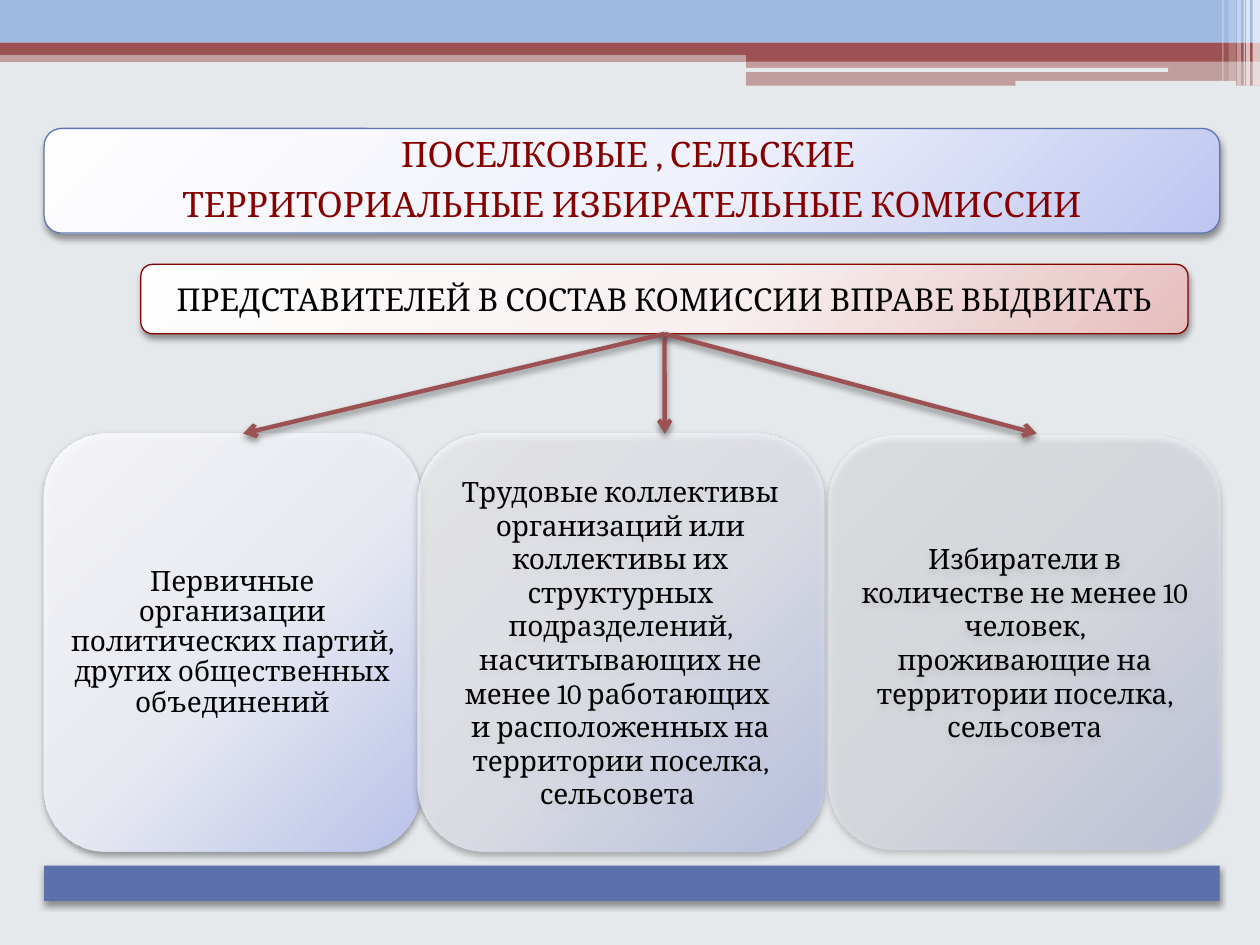
from lxml.etree import SubElement
from pptx import Presentation
from pptx.dml.color import RGBColor
from pptx.enum.shapes import MSO_CONNECTOR, MSO_SHAPE
from pptx.enum.text import MSO_ANCHOR, PP_ALIGN
from pptx.oxml.ns import qn
from pptx.util import Cm, Pt

FONT = "Cambria"
BACKGROUND = RGBColor(0xE5, 0xE9, 0xEB)
SKY = RGBColor(0x9F, 0xB9, 0xE1)
BRICK = RGBColor(0x9C, 0x52, 0x52)
MAROON = RGBColor(0x86, 0x00, 0x00)
BLUE = RGBColor(0x60, 0x76, 0xB4)
BAR_BLUE = RGBColor(0x5C, 0x71, 0xAC)
WHITE = RGBColor(0xFF, 0xFF, 0xFF)
BLACK = RGBColor(0x00, 0x00, 0x00)
BLUE_FADE = [RGBColor(0xFE, 0xFE, 0xFF), RGBColor(0xEF, 0xF1, 0xFB), RGBColor(0xBC, 0xC6, 0xF1)]
RED_FADE = [RGBColor(0xFE, 0xFE, 0xFE), RGBColor(0xF8, 0xF0, 0xF0), RGBColor(0xE6, 0xBE, 0xBE)]

HEADING = ["ПОСЕЛКОВЫЕ , СЕЛЬСКИЕ ", "ТЕРРИТОРИАЛЬНЫЕ ИЗБИРАТЕЛЬНЫЕ КОМИССИИ"]
QUESTION = "ПРЕДСТАВИТЕЛЕЙ В СОСТАВ КОМИССИИ ВПРАВЕ ВЫДВИГАТЬ"
PARTIES = "Первичные организации политических партий, других общественных объединений"
WORKERS = ("Трудовые коллективы организаций или коллективы их структурных подразделений, "
           "насчитывающих не менее 10 работающих \v"
           "и расположенных на территории поселка, сельсовета ")
VOTERS = ("Избиратели в количестве не менее 10 человек, проживающие на территории "
          "поселка, сельсовета")
# text, box in cm, opacity of the fill, line spacing
CARDS = [
    (PARTIES, (0.89, 8.74, 7.59, 8.43), 90, 0.9),
    (WORKERS, (8.41, 8.74, 8.2, 8.43), 70, 1.0),
    (VOTERS, (16.71, 8.79, 7.9, 8.33), 50, 1.0),
]


def add_color(parent, color, opacity):
    clr = SubElement(parent, qn("a:srgbClr"), val=str(color))
    if opacity < 100:
        SubElement(clr, qn("a:alpha"), val=str(opacity * 1000))


def add_block(s, kind, box, color=None, opacity=100):
    """Add a borderless shape; box is left, top, width, height in cm."""
    sp = s.shapes.add_shape(kind, *map(Cm, box))
    sp.shadow.inherit = False
    sp.line.fill.background()
    if color is not None:
        sp.fill.solid()
        sp.fill.fore_color.rgb = color
        if opacity < 100:
            solid = sp._element.spPr.find(qn("a:solidFill"))
            solid.remove(solid[0])
            add_color(solid, color, opacity)
    return sp


def fade(sp, colors, opacity=100):
    """Fill with a wide radial gradient that reads as a diagonal sheen."""
    sp.fill.gradient()
    grad = sp._element.spPr.find(qn("a:gradFill"))
    for child in list(grad):
        grad.remove(child)
    stops = SubElement(grad, qn("a:gsLst"))
    for pos, color in zip((0, 55, 100), colors):
        add_color(SubElement(stops, qn("a:gs"), pos=str(pos * 1000)), color, opacity)
    radial = SubElement(grad, qn("a:path"), path="circle")
    SubElement(radial, qn("a:fillToRect"), l="-40000", t="-90000", r="140000", b="190000")


def drop_shadow(sp, opacity=40):
    spPr = sp._element.spPr
    effects = spPr.find(qn("a:effectLst"))
    if effects is None:
        effects = SubElement(spPr, qn("a:effectLst"))
    shadow = SubElement(effects, qn("a:outerShdw"), blurRad=str(Pt(4)), dist=str(Pt(2)),
                        dir="5400000", rotWithShape="0")
    add_color(shadow, BLACK, opacity)


def set_text(sp, lines, size, color, inset, spacing=1.0, after=0):
    tf = sp.text_frame
    tf.word_wrap = True
    tf.vertical_anchor = MSO_ANCHOR.MIDDLE
    tf.margin_left = tf.margin_right = tf.margin_top = tf.margin_bottom = Cm(inset)
    for i, line in enumerate(lines):
        p = tf.add_paragraph() if i else tf.paragraphs[0]
        p.text = line
        p.alignment = PP_ALIGN.CENTER
        p.line_spacing = spacing
        p.space_before, p.space_after = Pt(0), Pt(after)
        p.font.name, p.font.size, p.font.color.rgb = FONT, Pt(size), color


def outline(sp, color):
    sp.line.color.rgb = color
    sp.line.width = Pt(0.75)


def add_top_band(s, width):
    rect, rounded = MSO_SHAPE.RECTANGLE, MSO_SHAPE.ROUNDED_RECTANGLE
    step = 15.04
    for kind, box, color, opacity in [
        (rect, (0, 1.02, width, 0.23), BRICK, 50),
        (rect, (0, 0, width, 0.86), SKY, 100),
        (rect, (0, 0.86, width, 0.25), BRICK, 100),
        (rect, (step, 0.99, width - step, 0.25), BRICK, 100),
        (rect, (step, 1.22, width - step, 0.51), BRICK, 50),
        (rounded, (step, 1.37, 8.51, 0.08), BACKGROUND, 100),
        (rounded, (20.47, 1.63, 4.45, 0.1), BACKGROUND, 100),
    ]:
        add_block(s, kind, box, color, opacity)
    for left, stripe, height, opacity in [
        (25.25, 0.15, 1.73, 65), (25.12, 0.08, 1.73, 65), (25.07, 0.03, 1.73, 60),
        (24.94, 0.08, 1.73, 40), (24.77, 0.15, 1.63, 20), (24.64, 0.03, 1.63, 30),
    ]:
        add_block(s, rect, (left, 0, stripe, height), WHITE, opacity)


def add_heading(s, box):
    frame = add_block(s, MSO_SHAPE.ROUNDED_RECTANGLE, box)
    fade(frame, BLUE_FADE)
    outline(frame, BLUE)
    drop_shadow(frame)
    left, top, width, height = box
    pad = 0.1
    title = s.shapes.title
    title.left, title.top = Cm(left + pad), Cm(top + pad)
    title.width, title.height = Cm(width - 2 * pad), Cm(height - 2 * pad)
    set_text(title, HEADING, 20, MAROON, 0.2, 0.9, 7)
    frame._element.addnext(title._element)  # title in front of its frame


def add_card(s, text, box, opacity, spacing):
    card = add_block(s, MSO_SHAPE.ROUNDED_RECTANGLE, box)
    fade(card, BLUE_FADE, opacity)
    drop_shadow(card)
    set_text(card, [text], 16, BLACK, 0.17, spacing, 5.6 if spacing < 1 else 0)


def add_question(s, box):
    pill = add_block(s, MSO_SHAPE.ROUNDED_RECTANGLE, box)
    fade(pill, RED_FADE)
    outline(pill, MAROON)
    drop_shadow(pill)
    set_text(pill, [QUESTION], 18, BLACK, 0.13)
    return pill


def add_arrow(s, source, x, y):
    """Draw an arrow from the bottom middle of source to a point in cm."""
    arrow = s.shapes.add_connector(MSO_CONNECTOR.STRAIGHT, 0, 0, Cm(x), Cm(y))
    arrow.begin_connect(source, 2)
    arrow.line.color.rgb = BRICK
    arrow.line.width = Pt(2.5)
    SubElement(arrow.line._get_or_add_ln(), qn("a:tailEnd"), type="arrow")
    drop_shadow(arrow, 45)


def main():
    prs = Presentation()
    prs.slide_width, prs.slide_height = Cm(25.4), Cm(19.05)
    s = prs.slides.add_slide(prs.slide_layouts[5])
    s.background.fill.solid()
    s.background.fill.fore_color.rgb = BACKGROUND

    add_top_band(s, 25.4)
    add_heading(s, (0.89, 2.59, 23.7, 2.11))
    for card in CARDS:
        add_card(s, *card)
    drop_shadow(add_block(s, MSO_SHAPE.RECTANGLE, (0.89, 17.45, 23.7, 0.71), BAR_BLUE))
    question = add_question(s, (2.84, 5.33, 21.11, 1.4))
    for x in (4.9, 13.4, 20.9):
        add_arrow(s, question, x, 8.74)
    prs.save("out.pptx")


if __name__ == "__main__":
    main()
